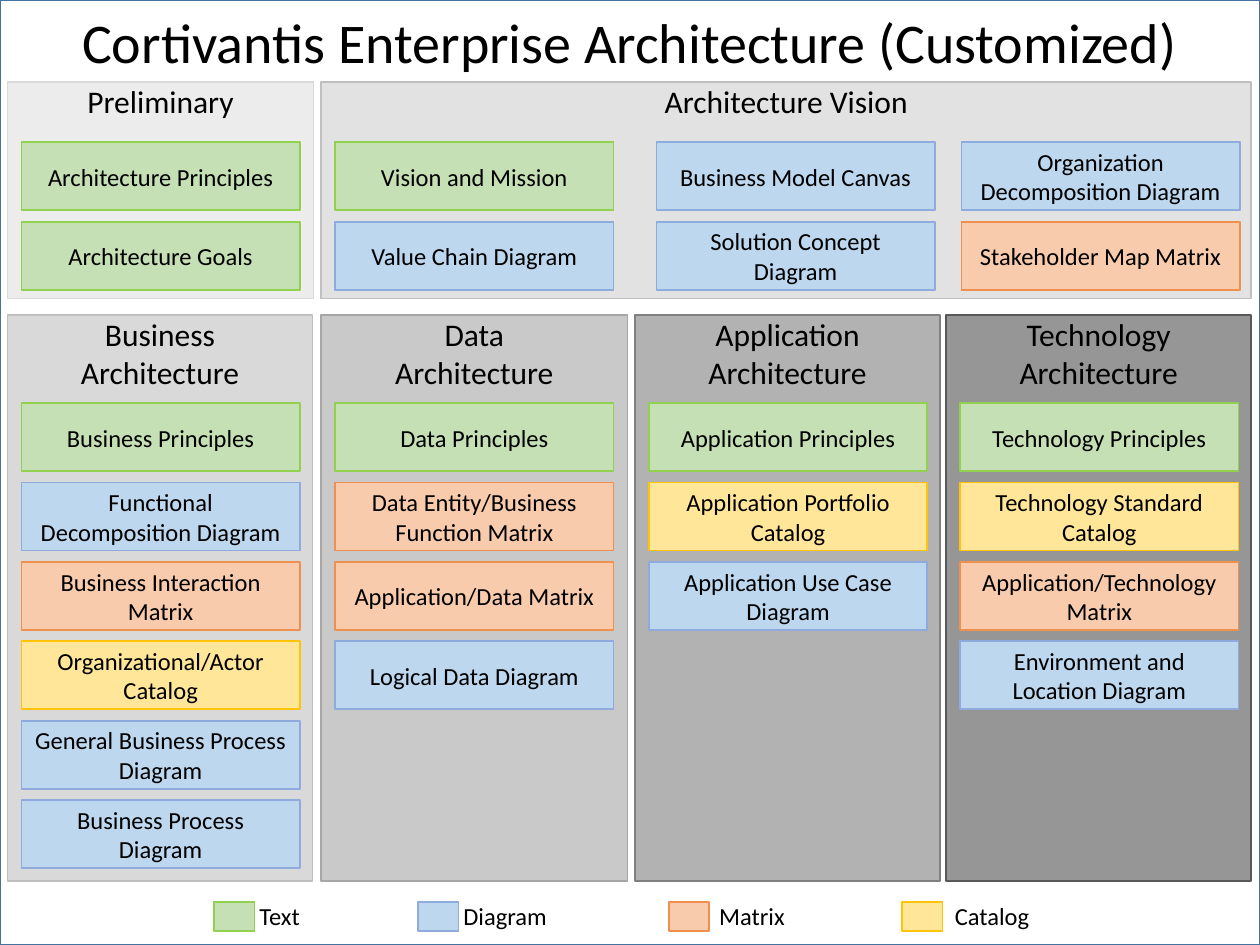
import dataclasses

import pptx
import pptx.dml.color
import pptx.enum.shapes
import pptx.enum.text
import pptx.util

Inches = pptx.util.Inches
ALIGN = pptx.enum.text.PP_ALIGN
ANCHOR = pptx.enum.text.MSO_ANCHOR


@dataclasses.dataclass(frozen=True)
class Theme:
    font: str = "Calibri"
    text: str = "000000"
    background: str = "FFFFFF"
    frame: str = "43739E"
    title_size: int = 32
    heading_size: int = 18
    item_size: int = 14
    kinds: tuple = (
        ("Text", ("C5E0B4", "92D050")),
        ("Diagram", ("BDD7EE", "8FAADC")),
        ("Matrix", ("F8CBAD", "F0904E")),
        ("Catalog", ("FFE699", "FFC409")),
    )


THEME = Theme()
KIND_COLORS = dict(THEME.kinds)
ITEM_WIDTH, ITEM_HEIGHT = 2.21, 0.54
ITEM_INSET, ROW_STEP = 0.11, 0.63

PANELS = [
    ((0.06, 0.65, 2.43, 1.72), "Preliminary", ("ECECEC", "D9D9D9"), 0.48, [
        (0, [("Architecture Principles", "Text"), ("Architecture Goals", "Text")]),
    ]),
    ((2.55, 0.65, 7.38, 1.72), "Architecture Vision", ("E2E2E2", "BFBFBF"), 0.48, [
        (0, [("Vision and Mission", "Text"), ("Value Chain Diagram", "Diagram")]),
        (2.55, [("Business Model Canvas", "Diagram"),
                ("Solution Concept Diagram", "Diagram")]),
        (4.97, [("Organization Decomposition Diagram", "Diagram"),
                ("Stakeholder Map Matrix", "Matrix")]),
    ]),
    ((0.06, 2.5, 2.42, 4.49), "Business\vArchitecture", ("D9D9D9", "BFBFBF"), 0.7, [
        (0, [("Business Principles", "Text"),
             ("Functional Decomposition Diagram", "Diagram"),
             ("Business Interaction Matrix", "Matrix"),
             ("Organizational/Actor Catalog", "Catalog"),
             ("General Business Process Diagram", "Diagram"),
             ("Business Process Diagram", "Diagram")]),
    ]),
    ((2.55, 2.5, 2.43, 4.49), "Data\vArchitecture", ("C9C9C9", "A6A6A6"), 0.7, [
        (0, [("Data Principles", "Text"),
             ("Data Entity/Business Function Matrix", "Matrix"),
             ("Application/Data Matrix", "Matrix"),
             ("Logical Data Diagram", "Diagram")]),
    ]),
    ((5.04, 2.5, 2.42, 4.49), "Application Architecture", ("B2B2B2", "808080"), 0.7, [
        (0, [("Application Principles", "Text"),
             ("Application Portfolio Catalog", "Catalog"),
             ("Application Use Case Diagram", "Diagram")]),
    ]),
    ((7.51, 2.5, 2.42, 4.49), "Technology Architecture", ("969696", "595959"), 0.7, [
        (0, [("Technology Principles", "Text"),
             ("Technology Standard Catalog", "Catalog"),
             ("Application/Technology Matrix", "Matrix"),
             ("Environment and Location Diagram", "Diagram")]),
    ]),
]

LEGEND_LEFTS = [(1.7, 1.96), (3.32, 3.58), (5.31, 5.61), (7.16, 7.48)]


def color(value):
    return pptx.dml.color.RGBColor.from_string(value)


def write(shape, text, size, align=ALIGN.CENTER, anchor=ANCHOR.MIDDLE):
    frame = shape.text_frame
    frame.word_wrap = True
    frame.vertical_anchor = anchor
    frame.text = text
    paragraph = frame.paragraphs[0]
    paragraph.alignment = align
    paragraph.font.name = THEME.font
    paragraph.font.size = pptx.util.Pt(size)
    paragraph.font.color.rgb = color(THEME.text)


def add_box(slide, box, colors):
    shape = slide.shapes.add_shape(
        pptx.enum.shapes.MSO_SHAPE.RECTANGLE, *map(Inches, box))
    fill, line = colors
    shape.shadow.inherit = False
    shape.fill.solid()
    shape.fill.fore_color.rgb = color(fill)
    shape.line.color.rgb = color(line)
    shape.line.width = pptx.util.Pt(1)
    return shape


def add_title(slide, box):
    title = slide.shapes.title
    title.left, title.top, title.width, title.height = map(Inches, box)
    write(title, "Cortivantis Enterprise Architecture (Customized)", THEME.title_size)
    title.text_frame.auto_size = pptx.enum.text.MSO_AUTO_SIZE.NONE


def add_panel(slide, box, heading, colors, first_row, columns):
    left, top = box[:2]
    panel = add_box(slide, box, colors)
    write(panel, heading, THEME.heading_size, anchor=ANCHOR.TOP)
    panel.text_frame.margin_top = 0
    for offset, items in columns:
        for row, (text, kind) in enumerate(items):
            item_box = (left + ITEM_INSET + offset, top + first_row + row * ROW_STEP,
                        ITEM_WIDTH, ITEM_HEIGHT)
            write(add_box(slide, item_box, KIND_COLORS[kind]), text, THEME.item_size)


def add_legend(slide, top):
    for (kind, colors), (key_left, label_left) in zip(THEME.kinds, LEGEND_LEFTS):
        add_box(slide, (key_left, top + 0.06, 0.32, 0.23), colors)
        label = slide.shapes.add_textbox(
            *map(Inches, (label_left, top, 0.9, 0.34)))
        write(label, kind, THEME.item_size, align=ALIGN.LEFT, anchor=ANCHOR.TOP)


def main():
    presentation = pptx.Presentation()
    presentation.slide_width = Inches(10)
    presentation.slide_height = Inches(7.5)
    slide = presentation.slides.add_slide(presentation.slide_layouts[5])
    frame = add_box(slide, (0, 0, 10, 7.5), (THEME.background, THEME.frame))
    slide.shapes.title.element.addprevious(frame.element)
    add_title(slide, (0, 0.01, 10, 0.64))
    for panel in PANELS:
        add_panel(slide, *panel)
    add_legend(slide, 7.1)
    presentation.save("out.pptx")


if __name__ == "__main__":
    main()
